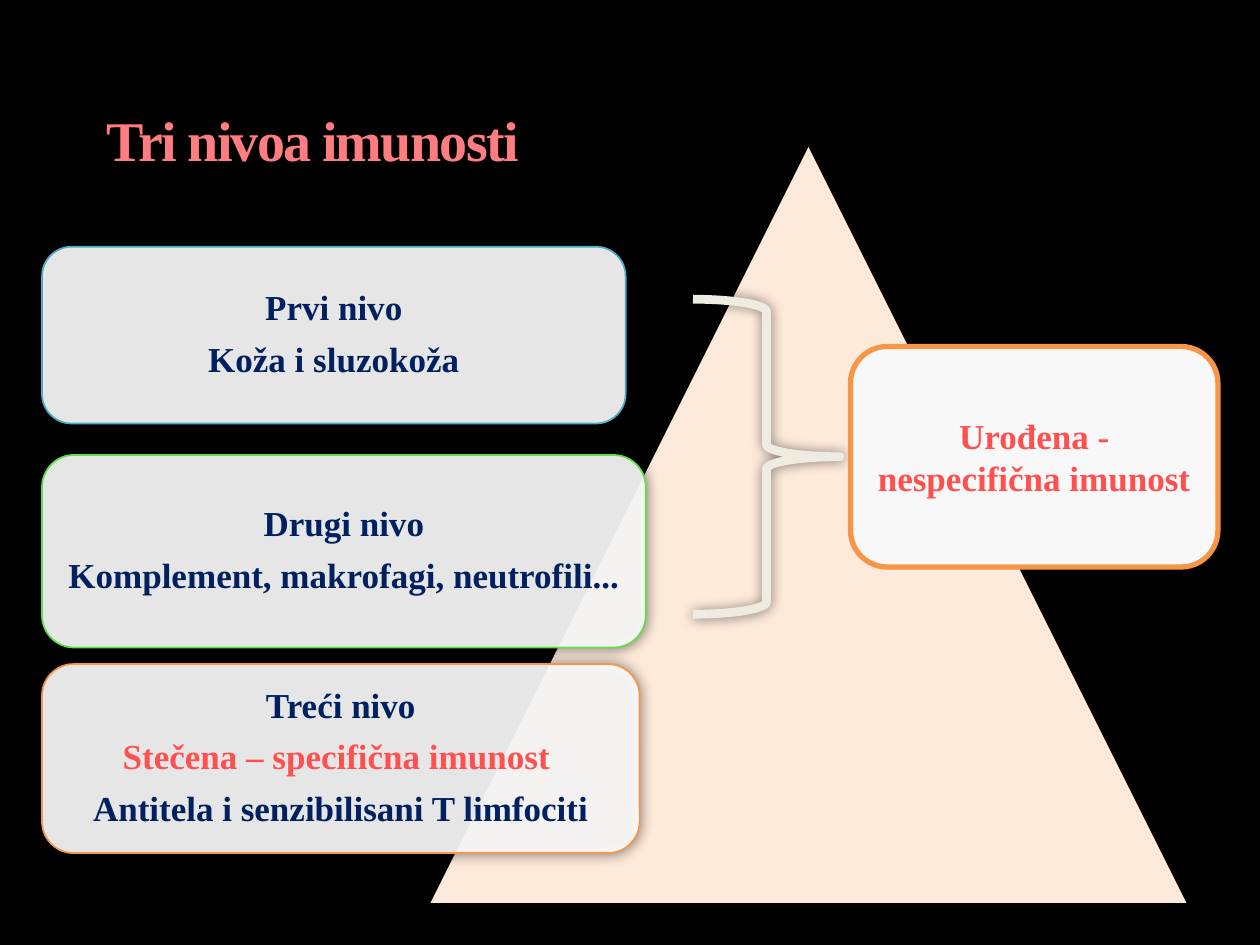
import pptx
import pptx.dml.color
import pptx.enum.shapes
import pptx.enum.text
import pptx.oxml
import pptx.oxml.ns
import pptx.util

Pt = pptx.util.Pt
MSO = pptx.enum.shapes.MSO_SHAPE
ANCHOR = pptx.enum.text.MSO_ANCHOR
CENTER = pptx.enum.text.PP_ALIGN.CENTER
FONT = "Times New Roman"
NAVY, RED = "002060", "FF5050"
NS = pptx.oxml.ns.nsdecls("a")

LEVELS = [
    ((24, 141, 333.5, 101), "4BACC6",
     [("Prvi nivo", NAVY), ("Koža i sluzokoža", NAVY)]),
    ((24, 260, 345, 110), "60E146",
     [("Drugi nivo", NAVY), ("Komplement, makrofagi, neutrofili...", NAVY)]),
    ((24, 379.5, 341.5, 108), "F79646",
     [("Treći nivo", NAVY), ("Stečena – specifična imunost ", RED),
      ("Antitela i senzibilisani T limfociti", NAVY)]),
]


def rgb(hex_color):
    return pptx.dml.color.RGBColor.from_string(hex_color)


def add_shape(s, kind, box, fill=None, line=None, width=1):
    sp = s.shapes.add_shape(kind, *map(Pt, box))
    sp.shadow.inherit = False
    if fill:
        sp.fill.solid()
        sp.fill.fore_color.rgb = rgb(fill)
    else:
        sp.fill.background()
    if line:
        sp.line.color.rgb = rgb(line)
        sp.line.width = Pt(width)
    else:
        sp.line.fill.background()
    return sp


def add_glow_shadow(sp):
    """Give the shape a soft, half-transparent shadow with no offset."""
    effects = sp._element.spPr.find(pptx.oxml.ns.qn("a:effectLst"))
    effects.append(pptx.oxml.parse_xml(
        f'<a:outerShdw {NS} blurRad="{Pt(7.5)}" dist="0" rotWithShape="0">'
        '<a:srgbClr val="000000"><a:alpha val="50000"/></a:srgbClr></a:outerShdw>'))


def set_alpha(sp, percent):
    color = sp._element.spPr.find(pptx.oxml.ns.qn("a:solidFill"))[0]
    color.append(pptx.oxml.parse_xml(f'<a:alpha {NS} val="{percent * 1000}"/>'))


def write_paragraph(p, text, color, size=20):
    p.text = text
    p.font.name = FONT
    p.font.size = Pt(size)
    p.font.bold = True
    p.font.color.rgb = rgb(color)


def add_title(s, box):
    tf = s.shapes.add_textbox(*map(Pt, box)).text_frame
    tf.word_wrap = True
    tf.vertical_anchor = ANCHOR.BOTTOM
    p = tf.paragraphs[0]
    write_paragraph(p, "Tri nivoa imunosti", "FF7C80", 32)
    p.runs[0].font._element.set("spc", "-100")


def add_level(s, box, line, lines):
    sp = add_shape(s, MSO.ROUNDED_RECTANGLE, box, "FFFFFF", line)
    set_alpha(sp, 90)
    add_glow_shadow(sp)
    tf = sp.text_frame
    tf.word_wrap = True
    tf.vertical_anchor = ANCHOR.MIDDLE
    tf.margin_left = tf.margin_right = tf.margin_top = tf.margin_bottom = Pt(6)
    for i, (text, color) in enumerate(lines):
        p = tf.add_paragraph() if i else tf.paragraphs[0]
        p.alignment = CENTER
        p.line_spacing = 0.9
        p.space_after = Pt(8)
        write_paragraph(p, text, color)


def add_pyramid(s, box):
    add_glow_shadow(add_shape(s, MSO.ISOSCELES_TRIANGLE, box, "FDEADA"))


def add_innate_group(s, brace_box, label_box):
    """Bracket the first two levels and label them."""
    add_glow_shadow(add_shape(s, MSO.RIGHT_BRACE, brace_box, line="EEECE1", width=5))
    label = add_shape(s, MSO.ROUNDED_RECTANGLE, label_box, "F8F8F8", "F79646", 3)
    tf = label.text_frame
    tf.word_wrap = True
    tf.vertical_anchor = ANCHOR.MIDDLE
    p = tf.paragraphs[0]
    p.alignment = CENTER
    write_paragraph(p, "Urođena - nespecifična imunost ", RED)


def main():
    prs = pptx.Presentation()
    prs.slide_width, prs.slide_height = Pt(720), Pt(540)
    s = prs.slides.add_slide(prs.slide_layouts[6])
    s.background.fill.solid()
    s.background.fill.fore_color.rgb = rgb("000000")
    add_pyramid(s, (246, 84, 432, 432))
    for box, line, lines in LEVELS:
        add_level(s, box, line, lines)
    add_title(s, (54, 30, 594, 72))
    add_innate_group(s, (396, 171, 84, 180), (486, 198, 210, 126))
    prs.save("out.pptx")


if __name__ == "__main__":
    main()
